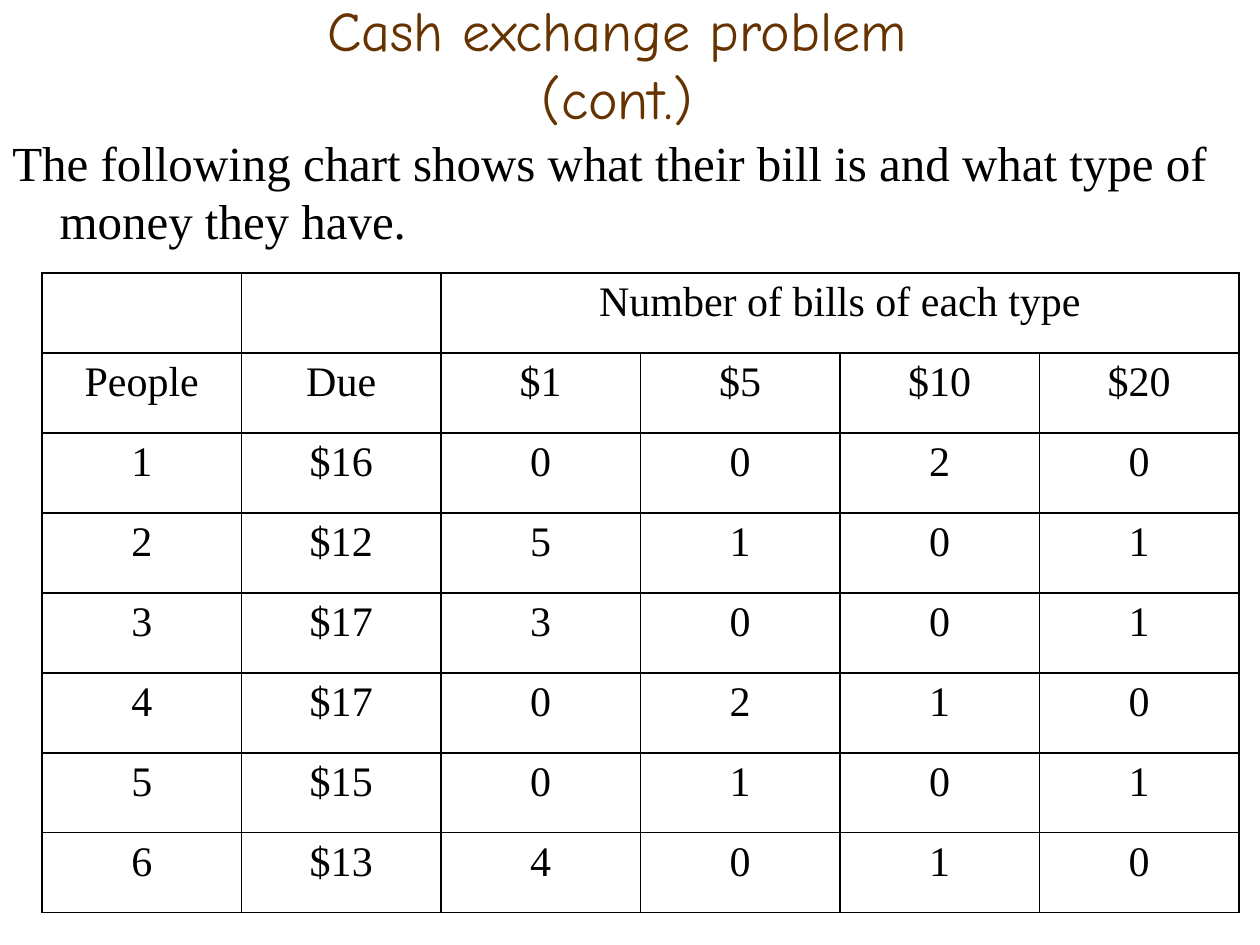
from copy import deepcopy

from lxml.etree import SubElement
from pptx import Presentation
from pptx.dml.color import RGBColor
from pptx.enum.text import MSO_ANCHOR as Anchor, MSO_AUTO_SIZE as AutoSize, PP_ALIGN as Align
from pptx.oxml.ns import qn
from pptx.util import Pt

COLORS = {"title": "663300", "text": "000000", "border": "000000"}
FORMATS = {
    "title": {"name": "Comic Neue", "size": Pt(32)},
    "body": {"name": "Times New Roman", "size": Pt(28)},
    "table": {"name": "Times New Roman", "size": Pt(24)},
}
BILLS = [
    ["", "", "Number of bills of each type", "", "", ""],
    ["People", "Due", "$1", "$5", "$10", "$20"],
    ["1", "$16", "0", "0", "2", "0"],
    ["2", "$12", "5", "1", "0", "1"],
    ["3", "$17", "3", "0", "0", "1"],
    ["4", "$17", "0", "2", "1", "0"],
    ["5", "$15", "0", "1", "0", "1"],
    ["6", "$13", "4", "0", "1", "0"],
]


class SlideBuilder:
    def __init__(self, slide):
        self.slide = slide

    def add_text(self, paragraph, text, style, color="text", align=Align.LEFT):
        paragraph.alignment = align
        for index, line in enumerate(text.split("\n")):
            if index:
                paragraph.add_line_break()
            run = paragraph.add_run()
            run.text = line
            for name, value in FORMATS[style].items():
                setattr(run.font, name, value)
            run.font.color.rgb = RGBColor.from_string(COLORS[color])
        for line_break in paragraph._p.findall(qn("a:br")):
            line_break.append(deepcopy(paragraph.runs[0]._r.rPr))

    def title(self, text, left, top, width, height):
        shape = self.slide.shapes.title
        box = {"left": left, "top": top, "width": width, "height": height}
        for name, value in box.items():
            setattr(shape, name, Pt(value))
        frame = shape.text_frame
        frame.auto_size = AutoSize.NONE
        frame.vertical_anchor = Anchor.MIDDLE
        self.add_text(frame.paragraphs[0], text, "title", "title", Align.CENTER)

    def body(self, text, left, top, width, height, indent):
        shape = self.slide.shapes.add_textbox(Pt(left), Pt(top), Pt(width), Pt(height))
        shape.text_frame.word_wrap = True
        paragraph = shape.text_frame.paragraphs[0]
        paragraph.space_before = Pt(5.6)
        properties = paragraph._p.get_or_add_pPr()
        properties.set("marL", str(Pt(indent)))
        properties.set("indent", str(Pt(-indent)))
        self.add_text(paragraph, text, "body")

    def table(self, rows, left, top, column_width, row_height):
        row_count, column_count = len(rows), len(rows[0])
        table = self.slide.shapes.add_table(
            row_count, column_count, Pt(left), Pt(top),
            Pt(column_width * column_count), Pt(row_height * row_count),
        ).table
        table.first_row = table.horz_banding = False
        for column in table.columns:
            column.width = Pt(column_width)
        for row, values in zip(table.rows, rows):
            row.height = Pt(row_height)
            for cell, value in zip(row.cells, values):
                self.border(cell)
                cell.fill.background()
                if value:
                    self.add_text(cell.text_frame.paragraphs[0], value, "table", align=Align.CENTER)
        return table

    def border(self, cell):
        properties = cell._tc.get_or_add_tcPr()
        for side in ("lnL", "lnR", "lnT", "lnB"):
            line = SubElement(properties, qn(f"a:{side}"), w=str(Pt(1)))
            fill = SubElement(line, qn("a:solidFill"))
            SubElement(fill, qn("a:srgbClr"), val=COLORS["border"])


def main():
    presentation = Presentation()
    presentation.slide_width, presentation.slide_height = Pt(720), Pt(540)
    builder = SlideBuilder(presentation.slides.add_slide(presentation.slide_layouts[5]))
    builder.title("Cash exchange problem\n(cont.)", 31, 0, 643.5, 72)
    builder.body(
        "The following chart shows what their bill is and what type of money they have.",
        0, 72, 720, 468, 27,
    )
    table = builder.table(BILLS, 24, 156, 114, 45.72)
    table.cell(0, 2).merge(table.cell(0, 5))
    presentation.save("out.pptx")


if __name__ == "__main__":
    main()
